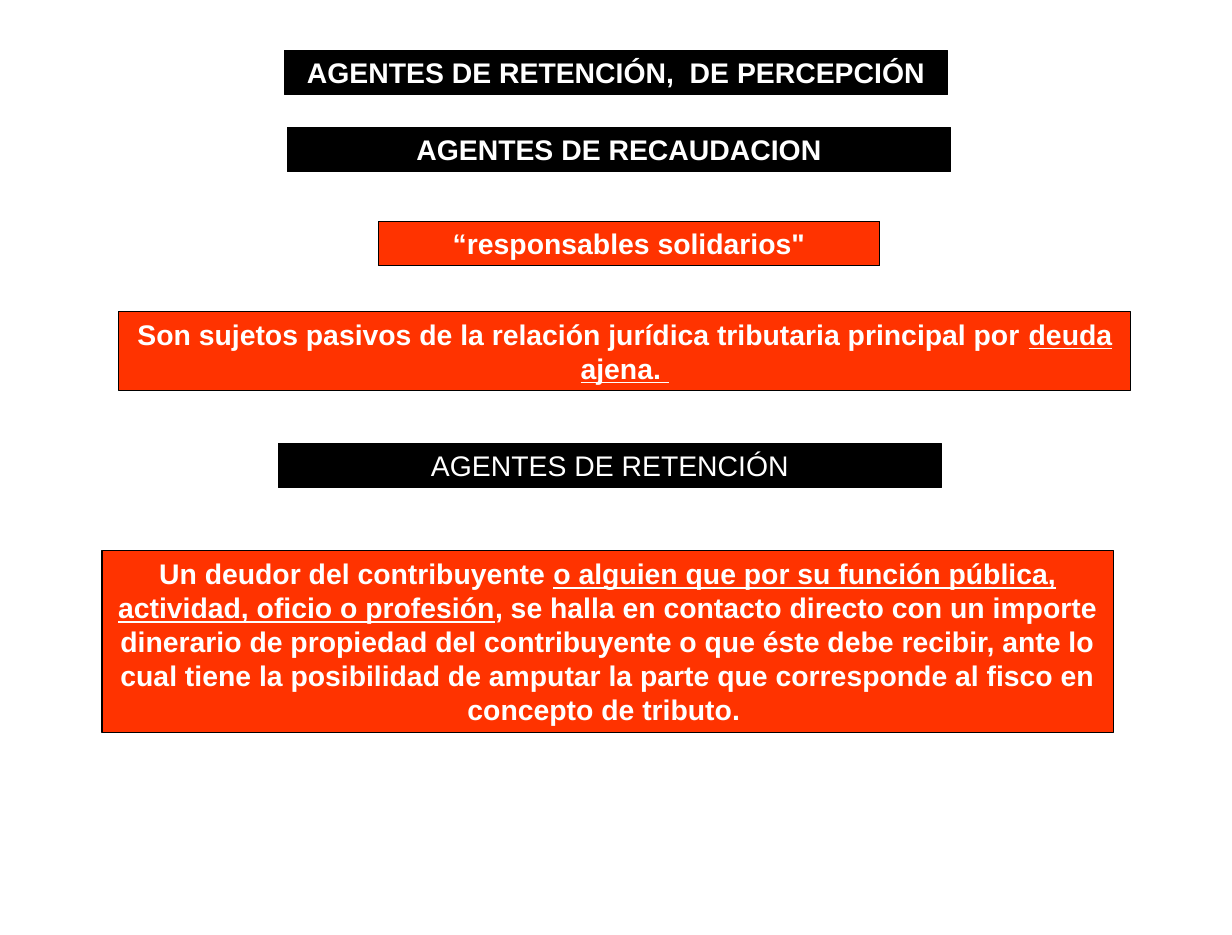
import pptx
import pptx.dml.color
import pptx.enum.shapes
import pptx.enum.text
import pptx.util

Pt = pptx.util.Pt
BLACK = pptx.dml.color.RGBColor(0x00, 0x00, 0x00)
WHITE = pptx.dml.color.RGBColor(0xFF, 0xFF, 0xFF)
RED = pptx.dml.color.RGBColor(0xFF, 0x33, 0x00)

# Content: runs as (text, underlined), then left, top, width, lines, fill, bold
HEADING_WIDTH, TERM_WIDTH, DEFINITION_WIDTH = 468, 354.2, 714.2
BOXES = [
    ([("AGENTES DE RETENCIÓN,  DE PERCEPCIÓN", False)],
     200.9, 35.4, HEADING_WIDTH, 1, BLACK, True),
    ([("AGENTES DE RECAUDACION", False)],
     203, 89.8, HEADING_WIDTH, 1, BLACK, True),
    ([("“responsables solidarios\"", False)],
     267, 156.2, TERM_WIDTH, 1, RED, True),
    ([("Son sujetos pasivos de la relación jurídica tributaria principal por ", False),
      ("deuda ajena. ", True)],
     84, 220, DEFINITION_WIDTH, 2, RED, True),
    ([("AGENTES DE RETENCIÓN", False)],
     196.6, 313, HEADING_WIDTH, 1, BLACK, False),
    ([("Un deudor del contribuyente ", False),
      ("o alguien que por su función pública, actividad, oficio o profesión", True),
      (", se halla en contacto directo con un importe dinerario de propiedad del "
       "contribuyente o que éste debe recibir, ante lo cual tiene la posibilidad de "
       "amputar la parte que corresponde al fisco en concepto de tributo. ", False)],
     72, 389, DEFINITION_WIDTH, 5, RED, True),
]
LINE_HEIGHT, VERTICAL_PADDING = 24.1, 7.5


def add_text(paragraph, text, size=20, font="Arial", color=WHITE, bold=True, underline=False):
    run = paragraph.add_run()
    run.text = text
    run.font.size = Pt(size)
    run.font.name = font
    run.font.color.rgb = color
    run.font.bold = bold
    run.font.underline = underline


def add_box(slide, runs, left, top, width, lines, fill, bold):
    height = lines * LINE_HEIGHT + VERTICAL_PADDING
    shape = slide.shapes.add_shape(pptx.enum.shapes.MSO_SHAPE.RECTANGLE,
                                   Pt(left), Pt(top), Pt(width), Pt(height))
    shape.shadow.inherit = False
    shape.fill.solid()
    shape.fill.fore_color.rgb = fill
    shape.line.color.rgb = BLACK
    shape.line.width = Pt(0.75)
    frame = shape.text_frame
    frame.word_wrap = True
    frame.auto_size = pptx.enum.text.MSO_AUTO_SIZE.SHAPE_TO_FIT_TEXT
    frame.vertical_anchor = pptx.enum.text.MSO_ANCHOR.MIDDLE
    paragraph = frame.paragraphs[0]
    paragraph.alignment = pptx.enum.text.PP_ALIGN.CENTER
    for text, underline in runs:
        add_text(paragraph, text, bold=bold, underline=underline)


def main():
    presentation = pptx.Presentation()
    presentation.slide_width = Pt(869.76)
    presentation.slide_height = Pt(660.24)
    slide = presentation.slides.add_slide(presentation.slide_layouts[6])

    # Headings and definitions, top to bottom
    for box in BOXES:
        add_box(slide, *box)

    presentation.save("out.pptx")


if __name__ == "__main__":
    main()
